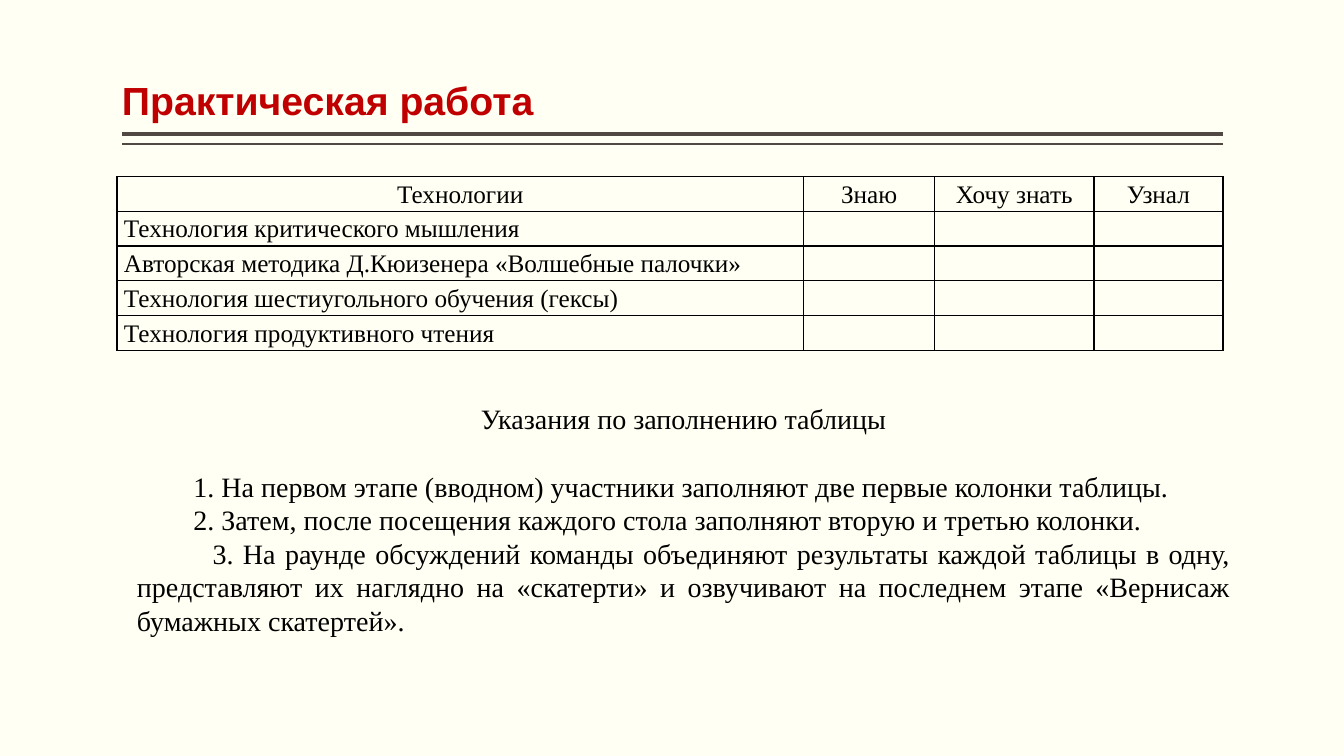
from dataclasses import dataclass

from lxml.etree import SubElement
from pptx import Presentation
from pptx.dml.color import RGBColor
from pptx.enum.shapes import MSO_CONNECTOR
from pptx.enum.text import MSO_ANCHOR, PP_ALIGN
from pptx.oxml.ns import qn
from pptx.util import Inches, Pt


@dataclass(frozen=True)
class Theme:
    background: RGBColor = RGBColor.from_string("FFFFF3")
    title: RGBColor = RGBColor.from_string("C00000")
    rule: RGBColor = RGBColor.from_string("514843")
    ink: RGBColor = RGBColor.from_string("000000")
    title_font: str = "Arial"
    body_font: str = "Times New Roman"
    title_size: int = 28
    table_size: int = 18
    body_size: int = 20


THEME = Theme()
HEADERS = ["Технологии", "Знаю", "Хочу знать", "Узнал"]
TECHNOLOGIES = [
    "Технология критического мышления",
    "Авторская методика Д.Кюизенера «Волшебные палочки»",
    "Технология шестиугольного обучения (гексы)",
    "Технология продуктивного чтения",
]
COLUMN_WIDTHS = [6.81, 1.3, 1.58, 1.28]
ROW_HEIGHT = 0.32
INSTRUCTIONS = [
    ("1. На первом этапе (вводном) участники заполняют две первые колонки таблицы.", 0.56),
    ("2. Затем, после посещения каждого стола заполняют вторую и третью колонки.", 0.56),
    ("3. На раунде обсуждений команды объединяют результаты каждой таблицы в одну, "
     "представляют их наглядно на «скатерти» и озвучивают на последнем этапе "
     "«Вернисаж бумажных скатертей».", 0.75),
]


def style_text(para, font, size, color, bold=False):
    for span in para.runs:
        span.font.name = font
        span.font.size = Pt(size)
        span.font.color.rgb = color
        span.font.bold = bold


def add_text_box(page, left, top, width, height, anchor):
    box = page.shapes.add_textbox(Inches(left), Inches(top), Inches(width), Inches(height))
    frame = box.text_frame
    frame.word_wrap = True
    frame.vertical_anchor = anchor
    return frame


def add_title(page):
    frame = add_text_box(page, 1.21, 0.08, 10.92, 1.2, MSO_ANCHOR.BOTTOM)
    frame.margin_left = frame.margin_right = 0
    frame.text = "Практическая работа"
    para = frame.paragraphs[0]
    para.line_spacing = 0.9
    style_text(para, THEME.title_font, THEME.title_size, THEME.title, bold=True)


def add_rule(page, top, weight):
    rule = page.shapes.add_connector(
        MSO_CONNECTOR.STRAIGHT, Inches(12.13), Inches(top), Inches(1.21), Inches(top))
    rule.line.color.rgb = THEME.rule
    rule.line.width = Pt(weight)
    SubElement(rule._element.spPr, qn("a:effectLst"))


def set_borders(cell):
    """Draw a thin line on every side of a cell, ahead of its fill."""
    properties = cell._tc.get_or_add_tcPr()
    for position, side in enumerate(("a:lnL", "a:lnR", "a:lnT", "a:lnB")):
        border = properties.makeelement(qn(side), {"w": str(Pt(1))})
        fill = SubElement(border, qn("a:solidFill"))
        SubElement(fill, qn("a:srgbClr"), val=str(THEME.ink))
        properties.insert(position, border)


def fill_cell(cell, text, align):
    cell.margin_left = cell.margin_right = Inches(0.07)
    cell.margin_top = cell.margin_bottom = 0
    cell.fill.background()
    set_borders(cell)
    cell.text = text
    para = cell.text_frame.paragraphs[0]
    para.alignment = align
    para.line_spacing = 1.15
    style_text(para, THEME.body_font, THEME.table_size, THEME.ink)


def add_technology_table(page):
    rows = [HEADERS] + [[name, "", "", ""] for name in TECHNOLOGIES]
    table = page.shapes.add_table(
        len(rows), len(HEADERS), Inches(1.16), Inches(1.75),
        Inches(sum(COLUMN_WIDTHS)), Inches(ROW_HEIGHT * len(rows))).table
    table.first_row = table.horz_banding = False
    for column, width in zip(table.columns, COLUMN_WIDTHS):
        column.width = Inches(width)
    for row_index, texts in enumerate(rows):
        table.rows[row_index].height = Inches(ROW_HEIGHT)
        align = PP_ALIGN.JUSTIFY if row_index else PP_ALIGN.CENTER
        for column_index, text in enumerate(texts):
            fill_cell(table.cell(row_index, column_index), text, align)


def add_instructions(page):
    frame = add_text_box(page, 1.26, 3.58, 11.04, 2.79, MSO_ANCHOR.BOTTOM)
    heading = frame.paragraphs[0]
    heading.text = "Указания по заполнению таблицы"
    heading.alignment = PP_ALIGN.CENTER
    heading.space_after = Pt(24)
    for text, indent in INSTRUCTIONS:
        para = frame.add_paragraph()
        para.text = text
        para.alignment = PP_ALIGN.JUSTIFY
        para._p.get_or_add_pPr().set("indent", str(Inches(indent)))
    for para in frame.paragraphs:
        style_text(para, THEME.body_font, THEME.body_size, THEME.ink)


def main():
    deck = Presentation()
    deck.slide_width, deck.slide_height = Inches(13.33), Inches(7.5)
    page = deck.slides.add_slide(deck.slide_layouts[6])
    page.background.fill.solid()
    page.background.fill.fore_color.rgb = THEME.background
    add_rule(page, 1.33, 3)
    add_rule(page, 1.43, 1)
    add_title(page)
    add_technology_table(page)
    add_instructions(page)
    deck.save("out.pptx")


if __name__ == "__main__":
    main()
